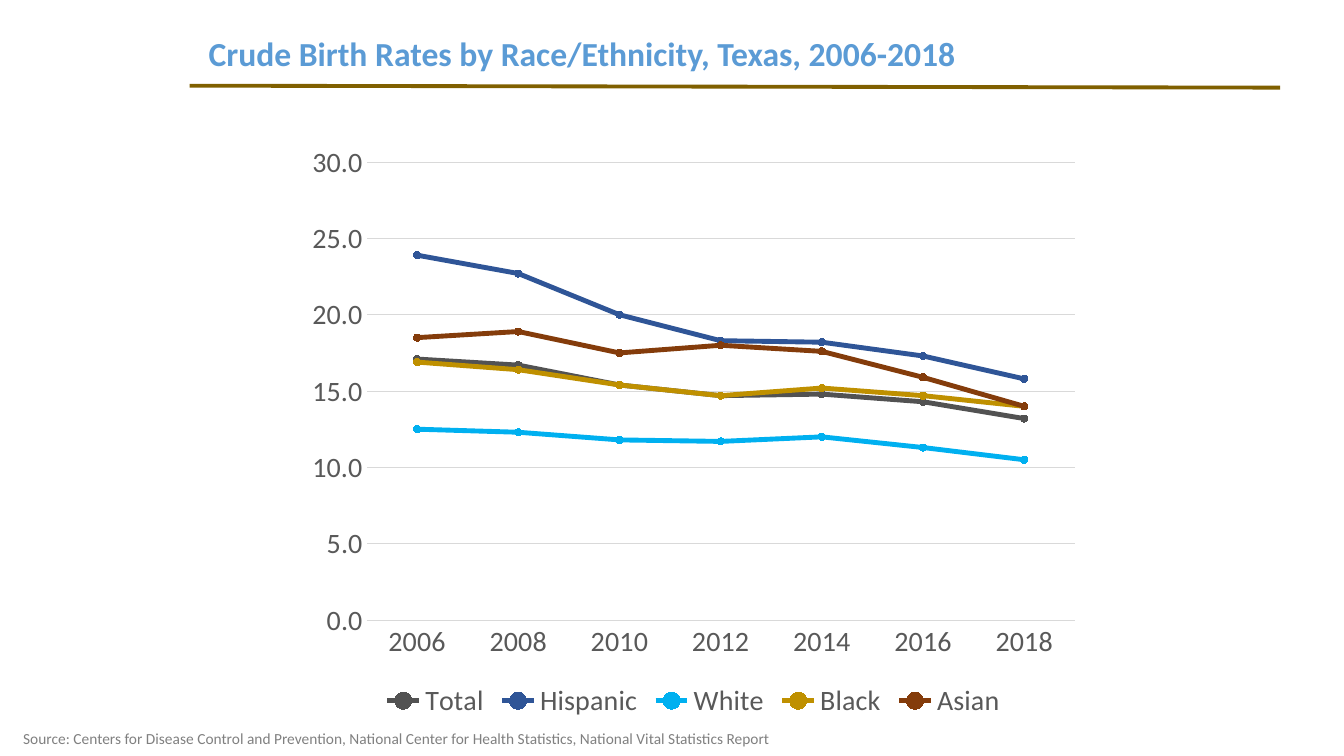
from dataclasses import dataclass

from lxml.etree import SubElement
from pptx import Presentation
from pptx.chart.data import CategoryChartData
from pptx.dml.color import RGBColor
from pptx.enum.chart import XL_CHART_TYPE, XL_LEGEND_POSITION, XL_MARKER_STYLE, XL_TICK_MARK
from pptx.enum.shapes import MSO_CONNECTOR
from pptx.enum.text import MSO_ANCHOR, MSO_AUTO_SIZE, PP_ALIGN
from pptx.oxml.ns import qn
from pptx.util import Pt


@dataclass(frozen=True)
class Theme:
    font: str = "Calibri"
    title: str = "5B9BD5"
    rule: str = "806000"
    label: str = "595959"
    grid: str = "D9D9D9"
    source: str = "808080"
    title_size: float = 24
    chart_size: float = 20
    source_size: float = 11


THEME = Theme()

YEARS = ["2006", "2008", "2010", "2012", "2014", "2016", "2018"]
# Group name, line colour, births per 1,000 people
BIRTH_RATES = [
    ("Total", "525252", [17.1, 16.7, 15.4, 14.7, 14.8, 14.3, 13.2]),
    ("Hispanic", "2F5597", [23.9, 22.7, 20, 18.3, 18.2, 17.3, 15.8]),
    ("White", "00B0F0", [12.5, 12.3, 11.8, 11.7, 12, 11.3, 10.5]),
    ("Black", "BF9000", [16.9, 16.4, 15.4, 14.7, 15.2, 14.7, 14]),
    ("Asian", "843C0B", [18.5, 18.9, 17.5, 18, 17.6, 15.9, 14]),
]


def style_font(font, size, color, bold=False):
    font.name = THEME.font
    font.size = Pt(size)
    font.bold = bold
    font.color.rgb = RGBColor.from_string(color)


def style_line(line, color, width):
    line.color.rgb = RGBColor.from_string(color)
    line.width = Pt(width)


def write_text(box, text, size, color, bold=False):
    frame = box.text_frame
    frame.word_wrap = True
    frame.auto_size = MSO_AUTO_SIZE.NONE
    frame.vertical_anchor = MSO_ANCHOR.TOP
    para = frame.paragraphs[0]
    para.alignment = PP_ALIGN.LEFT
    span = para.add_run()
    span.text = text
    style_font(span.font, size, color, bold)
    return para


def add_title(page, text):
    box = page.shapes.title
    box.left, box.top, box.width, box.height = Pt(141.84), Pt(23), Pt(779), Pt(36)
    para = write_text(box, text, THEME.title_size, THEME.title, bold=True)
    para.line_spacing = 0.9


def add_rule(page):
    rule = page.shapes.add_connector(
        MSO_CONNECTOR.STRAIGHT, Pt(135.4), Pt(61.2), Pt(914.4), Pt(62.6))
    style_line(rule.line, THEME.rule, 2.75)
    SubElement(rule.element.spPr, qn("a:effectLst"))


def add_source(page, text):
    box = page.shapes.add_textbox(Pt(9.4), Pt(517), Pt(630), Pt(21))
    write_text(box, text, THEME.source_size, THEME.source)


def style_axes(chart):
    for axis in (chart.category_axis, chart.value_axis):
        axis.major_tick_mark = axis.minor_tick_mark = XL_TICK_MARK.NONE
        style_font(axis.tick_labels.font, THEME.chart_size, THEME.label)
    style_line(chart.category_axis.format.line, THEME.grid, 0.75)

    rates = chart.value_axis
    rates.minimum_scale, rates.maximum_scale, rates.major_unit = 0, 30, 5
    rates.tick_labels.number_format = "0.0"
    rates.tick_labels.number_format_is_linked = False
    rates.format.line.fill.background()
    style_line(rates.major_gridlines.format.line, THEME.grid, 0.75)


def add_rate_chart(page):
    data = CategoryChartData(number_format="0.0")
    data.categories = YEARS
    for name, _, rates in BIRTH_RATES:
        data.add_series(name, rates)
    chart = page.shapes.add_chart(
        XL_CHART_TYPE.LINE_MARKERS, Pt(211.7), Pt(95), Pt(567.4), Pt(422), data).chart
    chart.has_title = False
    style_font(chart.font, THEME.chart_size, THEME.label)
    style_axes(chart)

    # Legend
    chart.has_legend = True
    chart.legend.position = XL_LEGEND_POSITION.BOTTOM
    chart.legend.include_in_layout = False
    style_font(chart.legend.font, THEME.chart_size, THEME.label)

    # Lines and markers
    plot = chart.plots[0]
    plot.vary_by_categories = False
    for series, (_, color, _) in zip(plot.series, BIRTH_RATES):
        series.smooth = False
        style_line(series.format.line, color, 3.5)
        marker = series.marker
        marker.style = XL_MARKER_STYLE.CIRCLE
        marker.size = 5
        marker.format.fill.solid()
        marker.format.fill.fore_color.rgb = RGBColor.from_string(color)
        style_line(marker.format.line, color, 0.75)


def main():
    deck = Presentation()
    deck.slide_width, deck.slide_height = Pt(960), Pt(540)
    page = deck.slides.add_slide(deck.slide_layouts.get_by_name("Title Only"))
    add_rule(page)
    add_rate_chart(page)
    add_title(page, "Crude Birth Rates by Race/Ethnicity, Texas, 2006-2018")
    add_source(page, "Source: Centers for Disease Control and Prevention, National Center "
                     "for Health Statistics, National Vital Statistics Report")
    deck.save("out.pptx")


if __name__ == "__main__":
    main()
